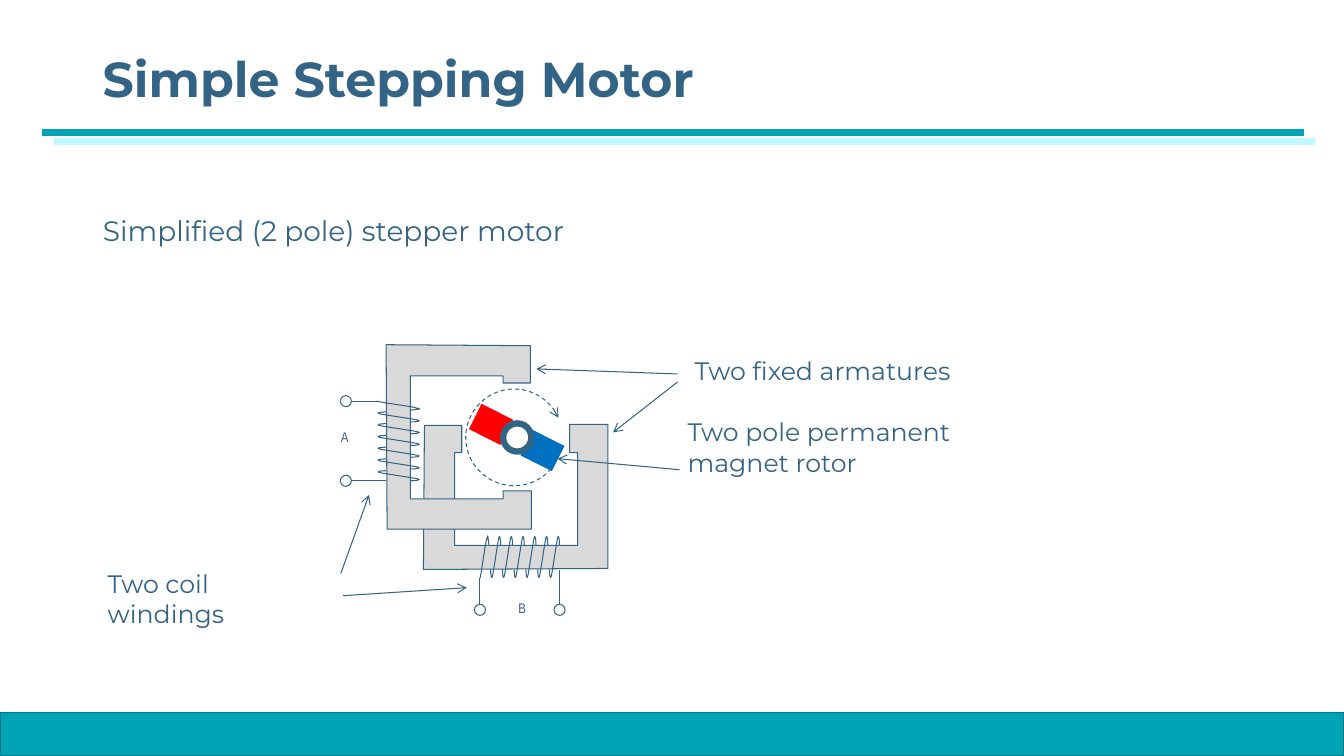
import math

from lxml import etree
from pptx import Presentation
from pptx import util as u
from pptx.dml.color import RGBColor
from pptx.enum import dml, shapes, text
from pptx.oxml.ns import qn

WIDTH, HEIGHT = 13.33, 7.5
INK = RGBColor(0x34, 0x64, 0x85)
TEAL = RGBColor(0x00, 0xA3, 0xB3)
DARK_TEAL = RGBColor(0x00, 0x79, 0x84)
STEEL = RGBColor(0xD9, 0xD9, 0xD9)
RED = RGBColor(0xFF, 0x00, 0x00)
BLUE = RGBColor(0x00, 0x70, 0xC0)
WHITE = RGBColor(0xFF, 0xFF, 0xFF)
RULE_SHADOW = "BDF9FF"
THIN = 0.75

# Content: lines of text, box, format
TEXTS = [
    (["Simple Stepping Motor"], (0.92, 0.4, 11.5, 0.81),
     dict(size=35, bold=True, inset=0.1, anchor=text.MSO_ANCHOR.MIDDLE, spacing=0.9)),
    (["Simplified (2 pole) stepper motor"], (0.97, 2.07, 8.67, 0.72), dict(size=20)),
    (["Two fixed armatures", "Two pole permanent magnet rotor"],
     (6.77, 3.48, 3.33, 1.31), dict(gap=22, first_indent=0.07)),
    (["Two coil windings"], (0.97, 5.59, 1.7, 0.7), dict(inset=0.1)),
    (["A"], (3.33, 4.2, 0.18, 0.27), dict(size=10, font="Arial Narrow", wrap=False)),
    (["B"], (5.09, 5.9, 0.18, 0.27), dict(size=10, font="Arial Narrow", wrap=False)),
]
POINTERS = [
    ((6.72, 3.71), (5.32, 3.66)), ((6.72, 3.79), (6.08, 4.29)),
    ((6.74, 4.66), (5.53, 4.55)), ((3.38, 5.69), (3.66, 4.91)),
    ((3.4, 5.91), (4.63, 5.83)),
]

# One armature with its winding, measured from the start of the coil
CORE_CENTRE, CORE_SIZE = (-1.2, -0.35), (0.27, 0.57)
ARMATURE = [(0.48, -1.2), (0.1, -1.2), (0.1, -0.92), (0.18, -0.92), (0.18, 0),
            (-1.04, 0), (-1.04, -0.92), (-0.97, -0.92), (-0.97, -1.19),
            (-1.34, -1.19), (-1.35, 0.24), (0.48, 0.23)]
TURN = [(0, 0), (0, -0.06), (-0.01, -0.12), (-0.02, -0.07),
        (-0.03, -0.02), (-0.07, 0.25), (-0.08, 0.3),
        (-0.09, 0.35), (-0.1, 0.3), (-0.1, 0.24)]
LAST_TURN = [(0, 0), (-0.01, -0.06), (-0.01, -0.13), (-0.02, -0.07),
             (-0.04, -0.02), (-0.07, 0.26), (-0.09, 0.33)]
TURNS, PITCH = 7, 0.7 / 6
LEADS = [(0, 0.24), (-0.79, 0.32)]
LEAD_END, TERMINAL, TERMINAL_SIZE = 0.58, 0.64, 0.11

ROTOR_CENTRE, ROTOR_ANGLE = (5.13, 4.34), 296.6
SWEEP_CENTRE, SWEEP_RADIUS, SWEEP, SWEEP_PARTS = (5.1, 4.34), 0.48, (40, 336), 21

presentation = Presentation()
presentation.slide_width, presentation.slide_height = u.Inches(WIDTH), u.Inches(HEIGHT)
slide = presentation.slides.add_slide(presentation.slide_layouts[6])


def inches(values):
    return [u.Inches(value) for value in values]


def add_text(lines, box, size=18, font="Montserrat", bold=False, inset=0.05,
             anchor=text.MSO_ANCHOR.TOP, wrap=True, gap=0, first_indent=0, spacing=None):
    frame = slide.shapes.add_textbox(*inches(box)).text_frame
    frame.word_wrap, frame.vertical_anchor = wrap, anchor
    frame.margin_left = frame.margin_right = u.Inches(inset)
    frame.margin_top = frame.margin_bottom = u.Inches(0.05)
    for index, line in enumerate(lines):
        paragraph = frame.add_paragraph() if index else frame.paragraphs[0]
        paragraph.text = line
        paragraph.line_spacing = spacing
        if index:
            paragraph.space_before = u.Pt(gap)
        elif first_indent:
            properties = paragraph._p.get_or_add_pPr()
            properties.set("marL", str(u.Inches(first_indent)))
        style = paragraph.font
        style.name, style.size, style.bold = font, u.Pt(size), bold
        style.color.rgb = INK


def paint(shape, fill=None, line=None, width=THIN):
    shape.shadow.inherit = False
    if fill is None:
        shape.fill.background()
    else:
        shape.fill.solid()
        shape.fill.fore_color.rgb = fill
    if line is None:
        shape.line.fill.background()
    else:
        shape.line.color.rgb, shape.line.width = line, u.Pt(width)
    return shape


def add_preset(kind, centre, size, angle=0, **colours):
    corner = [c - s / 2 for c, s in zip(centre, size)]
    shape = slide.shapes.add_shape(kind, *inches([*corner, *size]))
    shape.rotation = angle
    return paint(shape, **colours)


def add_outline(points, closed=False, fill=None):
    first, *rest = [inches(point) for point in points]
    builder = slide.shapes.build_freeform(*first, scale=1.0)
    builder.add_line_segments(rest, close=closed)
    return paint(builder.convert_to_shape(), fill, INK)


def add_curve(controls):
    """Chain of cubic curves: a start, then three points for each curve."""
    shape = add_outline(controls)
    segments = list(shape._element.iter(qn("a:lnTo")))
    for start in range(0, len(segments), 3):
        cubic = etree.Element(qn("a:cubicBezTo"))
        segments[start].addprevious(cubic)
        for segment in segments[start:start + 3]:
            cubic.append(segment[0])
            segment.getparent().remove(segment)
    return shape


def arc_controls(centre, radius, sweep, parts):
    first, last = map(math.radians, sweep)
    step = (last - first) / parts
    handle = 4 / 3 * math.tan(step / 4)

    def spot(angle, pull):
        return (centre[0] + radius * (math.cos(angle) - pull * math.sin(angle)),
                centre[1] + radius * (math.sin(angle) + pull * math.cos(angle)))

    controls = [spot(first, 0)]
    for part in range(parts):
        start, end = first + part * step, first + (part + 1) * step
        controls += [spot(start, handle), spot(end, -handle), spot(end, 0)]
    return controls


def add_arrowhead(shape):
    etree.SubElement(shape.line._get_or_add_ln(), qn("a:tailEnd"), type="arrow")


def add_line(start, end, colour=INK, width=THIN):
    line = slide.shapes.add_connector(shapes.MSO_CONNECTOR.STRAIGHT, *inches([*start, *end]))
    line.line.color.rgb, line.line.width = colour, u.Pt(width)
    effects = etree.SubElement(line._element.spPr, qn("a:effectLst"))
    return line, effects


def add_stator(place, angle):
    add_preset(shapes.MSO_SHAPE.RECTANGLE, place(*CORE_CENTRE), CORE_SIZE, angle, fill=WHITE)
    add_outline([place(*p) for p in ARMATURE], closed=True, fill=STEEL)
    for index in range(TURNS):
        turn = LAST_TURN if index == TURNS - 1 else TURN
        add_curve([place(x - index * PITCH, y) for x, y in turn])
    for x, y in LEADS:
        add_line(place(x, y), place(x, LEAD_END))
        add_preset(shapes.MSO_SHAPE.OVAL, place(x, TERMINAL), (TERMINAL_SIZE,) * 2, line=INK)


# Footer band and header rule
band = 0.43
add_preset(shapes.MSO_SHAPE.RECTANGLE, (WIDTH / 2, HEIGHT - band / 2), (WIDTH, band),
           fill=TEAL, line=DARK_TEAL, width=1)
rule, rule_effects = add_line((0.42, 1.31), (12.93, 1.31), TEAL, 5)
shadow = etree.SubElement(rule_effects, qn("a:outerShdw"), blurRad="0",
                          dist=str(u.Pt(11)), dir=str(40 * 60000), algn="ctr", rotWithShape="0")
etree.SubElement(shadow, qn("a:srgbClr"), val=RULE_SHADOW)

# Rotor and its direction of turn
for centre, colour in (((4.87, 4.21), RED), ((5.38, 4.47), BLUE)):
    add_preset(shapes.MSO_SHAPE.RECTANGLE, centre, (0.28, 0.35), ROTOR_ANGLE, fill=colour)
add_preset(shapes.MSO_SHAPE.OVAL, ROTOR_CENTRE, (0.28, 0.28), fill=WHITE, line=INK, width=4.5)
turning = add_curve(arc_controls(SWEEP_CENTRE, SWEEP_RADIUS, SWEEP, SWEEP_PARTS))
turning.line.dash_style = dml.MSO_LINE.DASH
add_arrowhead(turning)

# Stators: B upright, A turned a quarter
add_stator(lambda x, y: (5.55 + x, 5.41 + y), 0)
add_stator(lambda x, y: (4.07 - y, 4.77 + x), 90)

# Labels and pointers
for lines, box, style in TEXTS:
    add_text(lines, box, **style)
for start, end in POINTERS:
    add_arrowhead(add_line(start, end)[0])

presentation.save("out.pptx")
